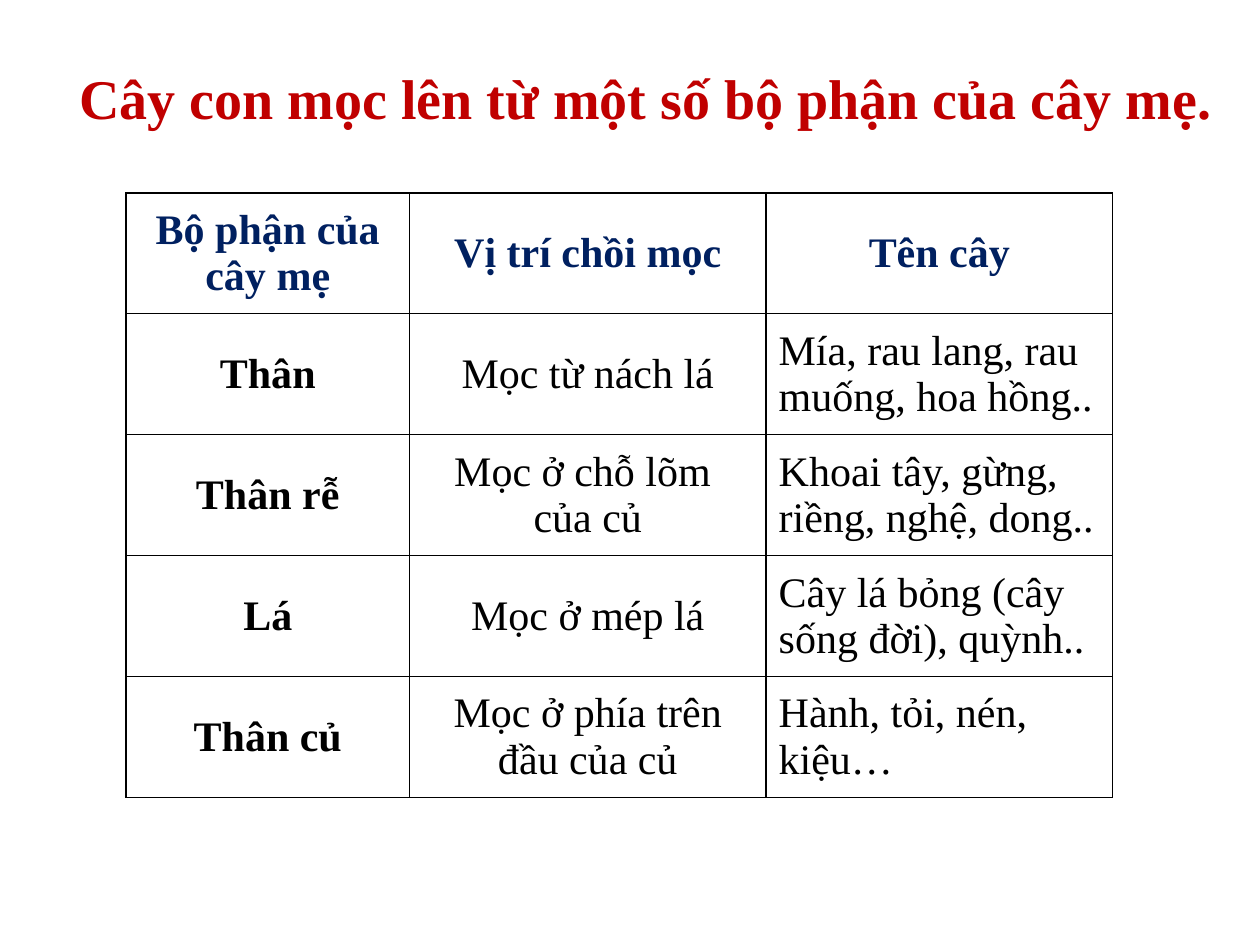
"""Build a slide on how young plants sprout from parts of the parent plant."""
from dataclasses import dataclass

from lxml.etree import SubElement as Sub
from pptx import Presentation
from pptx.dml.color import RGBColor
from pptx.enum.text import MSO_ANCHOR as Anchor, MSO_AUTO_SIZE as Fit, PP_ALIGN as Align
from pptx.oxml.ns import qn
from pptx.util import Inches, Pt

FONT = "Times New Roman"
RED, NAVY, BLACK = "C00000", "002060", "000000"
WIDTHS = (2.25, 2.83, 2.75)
HIGH = 0.96


@dataclass
class Row:
    organ: str
    spot: str
    plants: str
    head: bool = False


ROWS = [
    Row("Bộ phận của cây mẹ", "Vị trí chồi mọc", "Tên cây", True),
    Row("Thân", "Mọc từ nách lá", "Mía, rau lang, rau muống, hoa hồng.."),
    Row("Thân rễ", "Mọc ở chỗ lõm \ncủa củ", "Khoai tây, gừng, riềng, nghệ, dong.."),
    Row("Lá", "Mọc ở mép lá", "Cây lá bỏng (cây sống đời), quỳnh.."),
    Row("Thân củ", "Mọc ở phía trên đầu của củ", "Hành, tỏi, nén, kiệu…"),
]


def style(frame, size: int, color: str, bold: bool, align) -> None:
    for para in frame.paragraphs:
        para.alignment = align
        font = para.font
        font.name, font.size, font.bold = FONT, Pt(size), bold
        font.color.rgb = RGBColor.from_string(color)


def border(cell) -> None:
    props = cell._tc.get_or_add_tcPr()
    for spot, side in enumerate(("lnL", "lnR", "lnT", "lnB")):
        line = Sub(props, qn(f"a:{side}"), w=str(Pt(1)))
        Sub(Sub(line, qn("a:solidFill")), qn("a:srgbClr"), val=BLACK)
        props.insert(spot, line)


def fill(cell, text: str, color: str, bold: bool, align) -> None:
    cell.text = text
    cell.vertical_anchor = Anchor.MIDDLE
    cell.fill.background()
    border(cell)
    style(cell.text_frame, 24, color, bold, align)


def add_title(slide, text: str) -> None:
    title = slide.shapes.title
    title.left, title.top = Inches(0.53), Inches(0.45)
    title.width, title.height = Inches(9.42), Inches(0.64)
    frame = title.text_frame
    frame.text = text
    frame.word_wrap = True
    frame.auto_size = Fit.SHAPE_TO_FIT_TEXT
    frame.vertical_anchor = Anchor.TOP
    style(frame, 32, RED, True, Align.LEFT)


def add_grid(slide, rows: list[Row]) -> None:
    grid = slide.shapes.add_table(
        len(rows), len(WIDTHS), Inches(1), Inches(1.53),
        Inches(sum(WIDTHS)), Inches(HIGH * len(rows))).table
    grid.first_row = grid.horz_banding = False
    for col, width in zip(grid.columns, WIDTHS):
        col.width = Inches(width)
    for line, row in zip(grid.rows, rows):
        line.height = Inches(HIGH)
        color = NAVY if row.head else BLACK
        last = Align.CENTER if row.head else Align.LEFT
        organ, spot, plants = line.cells
        fill(organ, row.organ, color, True, Align.CENTER)
        fill(spot, row.spot, color, row.head, Align.CENTER)
        fill(plants, row.plants, color, row.head, last)


def main() -> None:
    deck = Presentation()
    deck.slide_width, deck.slide_height = Inches(10), Inches(7.5)
    slide = deck.slides.add_slide(deck.slide_layouts[5])
    add_title(slide, "Cây con mọc lên từ một số bộ phận của cây mẹ.")
    add_grid(slide, ROWS)
    deck.save("out.pptx")


if __name__ == "__main__":
    main()
